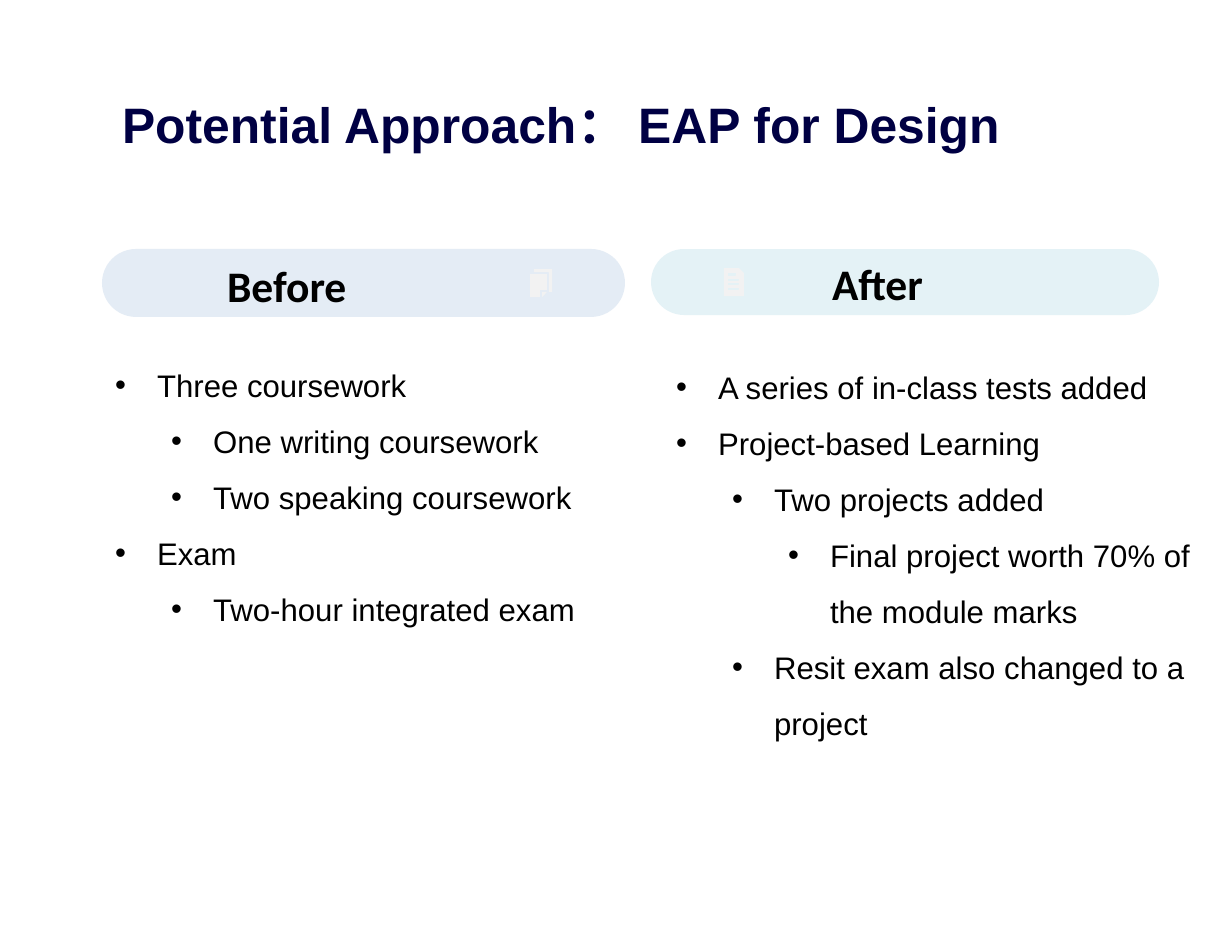
from dataclasses import dataclass

import lxml.etree
import pptx
import pptx.dml.color
import pptx.enum.shapes
import pptx.enum.text
import pptx.oxml.ns
import pptx.util

SCALE = 914400 / 112
INDENT = 42
LEVEL_STEP = 56
ICON_COLOR = "F2F2F2"
TITLE = {"size": pptx.util.Pt(32), "name": "Arial", "bold": True}
HEADING = {"size": pptx.util.Pt(28), "name": "Calibri", "bold": True}
BODY = {"size": pptx.util.Pt(20), "name": "Arial", "bold": False}

Contour = list[tuple[int, int]]


@dataclass(frozen=True)
class Box:
    """A rectangle in px."""

    left: int
    top: int
    width: int
    height: int

    def emu(self) -> list[int]:
        """Return the rectangle in EMU."""
        return [px(value) for value in (self.left, self.top, self.width, self.height)]

    def contour(self) -> Contour:
        """Return the four corners."""
        right, bottom = self.left + self.width, self.top + self.height
        return [(self.left, self.top), (right, self.top), (right, bottom), (self.left, bottom)]


@dataclass(frozen=True)
class Column:
    """One side of the comparison."""

    heading: str
    pill: Box
    color: str
    heading_box: Box
    icon: list[Contour]
    body_box: Box
    bullets: list[tuple[int, str]]


COPY_ICON = [
    [(542, 292), (547, 292), (542, 297)],
    [(530, 274), (547, 274), (547, 290), (540, 290), (540, 297), (530, 297)],
    [(534, 269), (552, 269), (552, 292), (549, 292), (549, 272), (534, 272)],
]
DOCUMENT_ICON = [
    [(739, 268), (724, 268), (724, 296), (744, 296), (744, 273)],
    Box(728, 273, 8, 3).contour(),
    *[Box(728, top, 11, 2).contour() for top in (279, 283, 288)],
]
COLUMNS = [
    Column(
        "Before", Box(102, 249, 523, 68), "4F81BD", Box(216, 253, 143, 64),
        COPY_ICON, Box(104, 342, 559, 464),
        [
            (0, "Three coursework"),
            (1, "One writing coursework"),
            (1, "Two speaking coursework"),
            (0, "Exam"),
            (1, "Two-hour integrated exam"),
        ],
    ),
    Column(
        "After", Box(651, 249, 508, 66), "4BACC6", Box(821, 251, 116, 64),
        DOCUMENT_ICON, Box(665, 344, 559, 633),
        [
            (0, "A series of in-class tests added"),
            (0, "Project-based Learning"),
            (1, "Two projects added"),
            (2, "Final project worth 70% of the module marks"),
            (1, "Resit exam also changed to a project"),
        ],
    ),
]


def px(value: int) -> int:
    """Turn px into EMU."""
    return round(value * SCALE)


def rgb(color: str) -> pptx.dml.color.RGBColor:
    """Turn a hex string into a colour."""
    return pptx.dml.color.RGBColor.from_string(color)


def paint(shape, color: str) -> None:
    """Give a shape a plain fill without line or shadow."""
    shape.shadow.inherit = False
    shape.fill.solid()
    shape.fill.fore_color.rgb = rgb(color)
    shape.line.fill.background()


def add_pill(page, box: Box, color: str) -> None:
    """Draw a translucent bar with fully rounded ends."""
    pill = page.shapes.add_shape(pptx.enum.shapes.MSO_SHAPE.ROUNDED_RECTANGLE, *box.emu())
    pill.adjustments[0] = 0.5
    paint(pill, color)
    tint = next(pill.element.spPr.iter(pptx.oxml.ns.qn("a:srgbClr")))
    lxml.etree.SubElement(tint, pptx.oxml.ns.qn("a:alpha"), val="15000")


def add_icon(page, contours: list[Contour]) -> None:
    """Draw an icon from closed contours."""
    builder = page.shapes.build_freeform(*contours[0][0], scale=SCALE)
    for index, (start, *points) in enumerate(contours):
        if index:
            builder.move_to(*start)
        builder.add_line_segments(points, close=True)
    paint(builder.convert_to_shape(), ICON_COLOR)


def add_text(page, box: Box, frame_format: dict):
    """Add a text box and return its frame."""
    frame = page.shapes.add_textbox(*box.emu()).text_frame
    frame.auto_size = pptx.enum.text.MSO_AUTO_SIZE.SHAPE_TO_FIT_TEXT
    for name, value in frame_format.items():
        setattr(frame, name, value)
    return frame


def write(para, text: str, font_format: dict, color: str = "000000") -> None:
    """Write one formatted run into a paragraph."""
    span = para.add_run()
    span.text = text
    for name, value in font_format.items():
        setattr(span.font, name, value)
    span.font.color.rgb = rgb(color)


def add_bullets(page, box: Box, bullets: list[tuple[int, str]]) -> None:
    """Add a nested bullet list."""
    frame = add_text(page, box, {"word_wrap": True})
    for index, (level, text) in enumerate(bullets):
        para = frame.add_paragraph() if index else frame.paragraphs[0]
        para.level = level
        para.line_spacing = 1.5
        properties = para._p.get_or_add_pPr()
        properties.set("marL", str(px(INDENT + level * LEVEL_STEP)))
        properties.set("indent", str(px(-INDENT)))
        lxml.etree.SubElement(properties, pptx.oxml.ns.qn("a:buFont"), typeface="Arial")
        lxml.etree.SubElement(properties, pptx.oxml.ns.qn("a:buChar"), char="•")
        write(para, text, BODY)


def add_column(page, column: Column) -> None:
    """Draw one side of the comparison."""
    add_pill(page, column.pill, column.color)
    bottom = pptx.enum.text.MSO_ANCHOR.BOTTOM
    frame = add_text(page, column.heading_box, {"word_wrap": False, "vertical_anchor": bottom})
    write(frame.paragraphs[0], column.heading, HEADING)
    add_icon(page, column.icon)
    add_bullets(page, column.body_box, column.bullets)


def main() -> None:
    """Build and save the deck."""
    deck = pptx.Presentation()
    deck.slide_width, deck.slide_height = px(1232), px(952)
    page = deck.slides.add_slide(deck.slide_layouts[6])
    margins = dict.fromkeys(("margin_left", "margin_top", "margin_right", "margin_bottom"), 0)
    frame = add_text(page, Box(122, 94, 989, 60), {"word_wrap": True, **margins})
    write(frame.paragraphs[0], "Potential Approach： EAP for Design", TITLE, "000043")
    for column in COLUMNS:
        add_column(page, column)
    deck.save("out.pptx")


if __name__ == "__main__":
    main()
